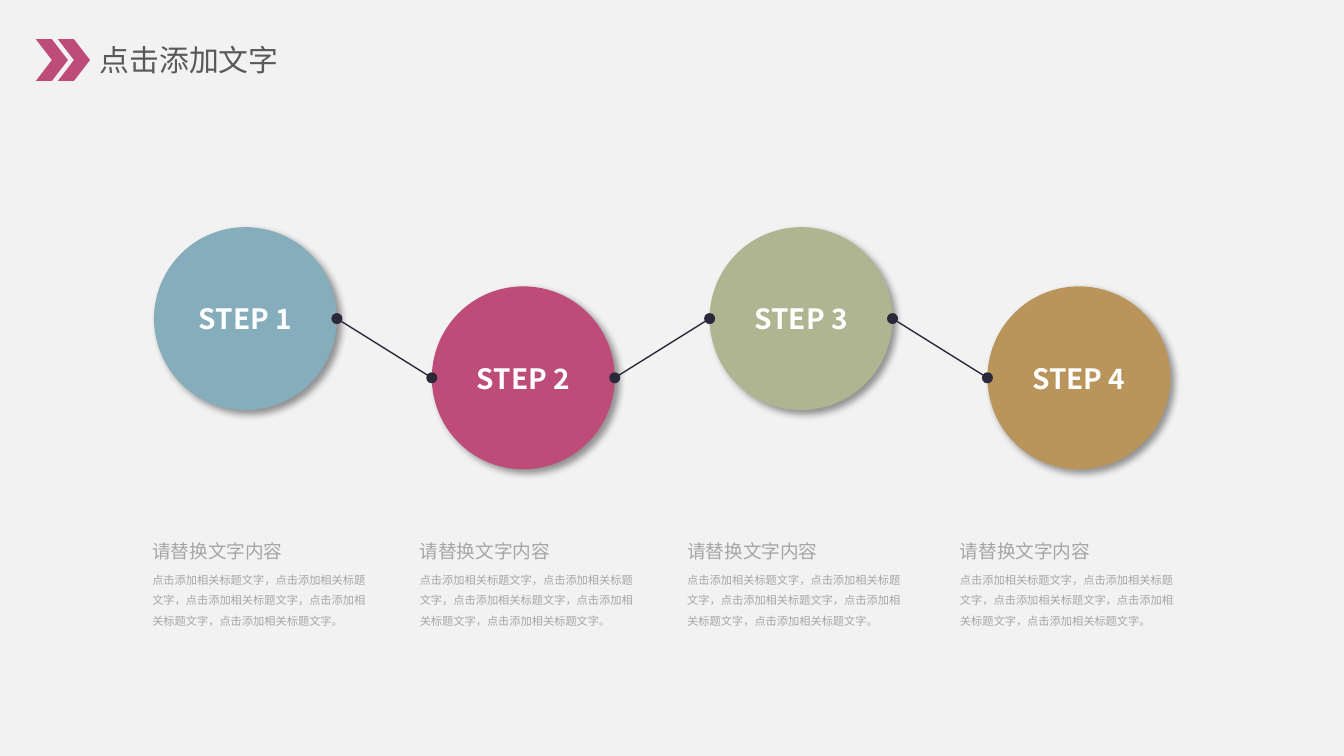
from lxml import etree
from pptx import Presentation
from pptx.dml.color import RGBColor
from pptx.enum.shapes import MSO_CONNECTOR, MSO_SHAPE
from pptx.enum.text import MSO_ANCHOR, MSO_AUTO_SIZE, PP_ALIGN
from pptx.oxml.ns import qn
from pptx.util import Pt

CHEVRON, OVAL = MSO_SHAPE.CHEVRON, MSO_SHAPE.OVAL
STRAIGHT = MSO_CONNECTOR.STRAIGHT
TOP, MIDDLE = MSO_ANCHOR.TOP, MSO_ANCHOR.MIDDLE
LEFT, CENTER = PP_ALIGN.LEFT, PP_ALIGN.CENTER
GROW, FIXED = MSO_AUTO_SIZE.SHAPE_TO_FIT_TEXT, MSO_AUTO_SIZE.NONE

SANS = "Noto Sans CJK SC"
BACKGROUND, ACCENT, DARK = "F2F2F2", "BD4D78", "2B2939"
STEP_FILLS = ["85ADBC", ACCENT, "AFB591", "B9945B"]
CAPTION_LEFTS = [76.3, 219.6, 362.9, 509]
CAPTION_HEADING = "请替换文字内容"
CAPTION_BODY = "，".join(["点击添加相关标题文字"] * 5) + "。"


def color(hex_code):
    return RGBColor.from_string(hex_code)


def write(shape, text, size, ink, font=SANS, bold=False, align=LEFT,
          anchor=TOP, spacing=None, fit=GROW):
    frame = shape.text_frame
    frame.word_wrap = True
    frame.auto_size = fit
    frame.vertical_anchor = anchor
    frame.margin_left = frame.margin_right = Pt(5.3)
    frame.margin_top = frame.margin_bottom = Pt(2.7)
    paragraph = frame.paragraphs[0]
    paragraph.alignment = align
    paragraph.line_spacing = spacing
    run = paragraph.add_run()
    run.text = text
    run.font.size = Pt(size)
    run.font.bold = bold
    run.font.color.rgb = color(ink)
    run.font.name = font
    # East Asian glyphs take their own font entry
    etree.SubElement(run.font._element, qn("a:ea"), typeface=font)


def add_filled(slide, preset, left, top, width, height, fill):
    shape = slide.shapes.add_shape(
        preset, Pt(left), Pt(top), Pt(width), Pt(height))
    shape.shadow.inherit = False
    shape.fill.solid()
    shape.fill.fore_color.rgb = color(fill)
    shape.line.fill.background()
    return shape


def add_drop_shadow(shape):
    effects = shape._element.spPr.find(qn("a:effectLst"))
    shadow = etree.SubElement(
        effects, qn("a:outerShdw"), blurRad=str(Pt(4)), dist=str(Pt(3)),
        dir=str(45 * 60000), algn="tl", rotWithShape="0")
    black = etree.SubElement(shadow, qn("a:srgbClr"), val="000000")
    etree.SubElement(black, qn("a:alpha"), val="40000")


def add_header(slide, left, top, width, height):
    # Double chevron
    for offset in (0, 11.8):
        add_filled(slide, CHEVRON, left + offset, top + 1.5, 17.2, 22.4, ACCENT)
    # Title
    title = slide.shapes.title
    title.left, title.top = Pt(left + 29), Pt(top)
    title.width, title.height = Pt(width - 29), Pt(height)
    write(title, "点击添加文字", 16, "595959")


def add_link(slide, start, end):
    link = slide.shapes.add_connector(STRAIGHT, *map(Pt, start + end))
    link.line.color.rgb = color(DARK)
    link.line.width = Pt(0.75)
    # Round dots at both ends
    for tag in ("a:headEnd", "a:tailEnd"):
        etree.SubElement(link.line._get_or_add_ln(), qn(tag), type="oval")
    etree.SubElement(link._element.spPr, qn("a:effectLst"))


def add_steps(slide, left, top, width, height):
    diameter = 98
    pitch = (width - diameter) / (len(STEP_FILLS) - 1)
    drop = height - diameter
    corners = [(left + i * pitch, top + i % 2 * drop)
               for i in range(len(STEP_FILLS))]
    # Circles, every second one lower
    for number, ((x, y), fill) in enumerate(zip(corners, STEP_FILLS), 1):
        circle = add_filled(slide, OVAL, x, y, diameter, diameter, fill)
        add_drop_shadow(circle)
        write(circle, f"STEP {number}", 15, "FFFFFF", bold=True,
              align=CENTER, anchor=MIDDLE, fit=FIXED)
    # Links from the right edge of each circle to the next one
    for (x1, y1), (x2, y2) in zip(corners, corners[1:]):
        add_link(slide, (x1 + diameter, y1 + diameter / 2),
                 (x2, y2 + diameter / 2))


def add_caption(slide, left, top, width, height):
    heading = slide.shapes.add_textbox(Pt(left), Pt(top), Pt(width), Pt(20))
    write(heading, CAPTION_HEADING, 10, "A6A6A6", font="Arial", spacing=1.2)
    body = slide.shapes.add_textbox(
        Pt(left), Pt(top + 16.6), Pt(125.3), Pt(height - 16.6))
    write(body, CAPTION_BODY, 6, "A6A6A6", spacing=1.5)


def main():
    deck = Presentation()
    deck.slide_width, deck.slide_height = Pt(720), Pt(405)
    slide = deck.slides.add_slide(deck.slide_layouts[5])
    slide.background.fill.solid()
    slide.background.fill.fore_color.rgb = color(BACKGROUND)

    add_header(slide, 19.2, 19.5, 170, 24.5)
    add_steps(slide, 82.5, 121.7, 544.5, 129.7)
    for left in CAPTION_LEFTS:
        add_caption(slide, left, 284.4, 136, 54.8)

    deck.save("out.pptx")


if __name__ == "__main__":
    main()
